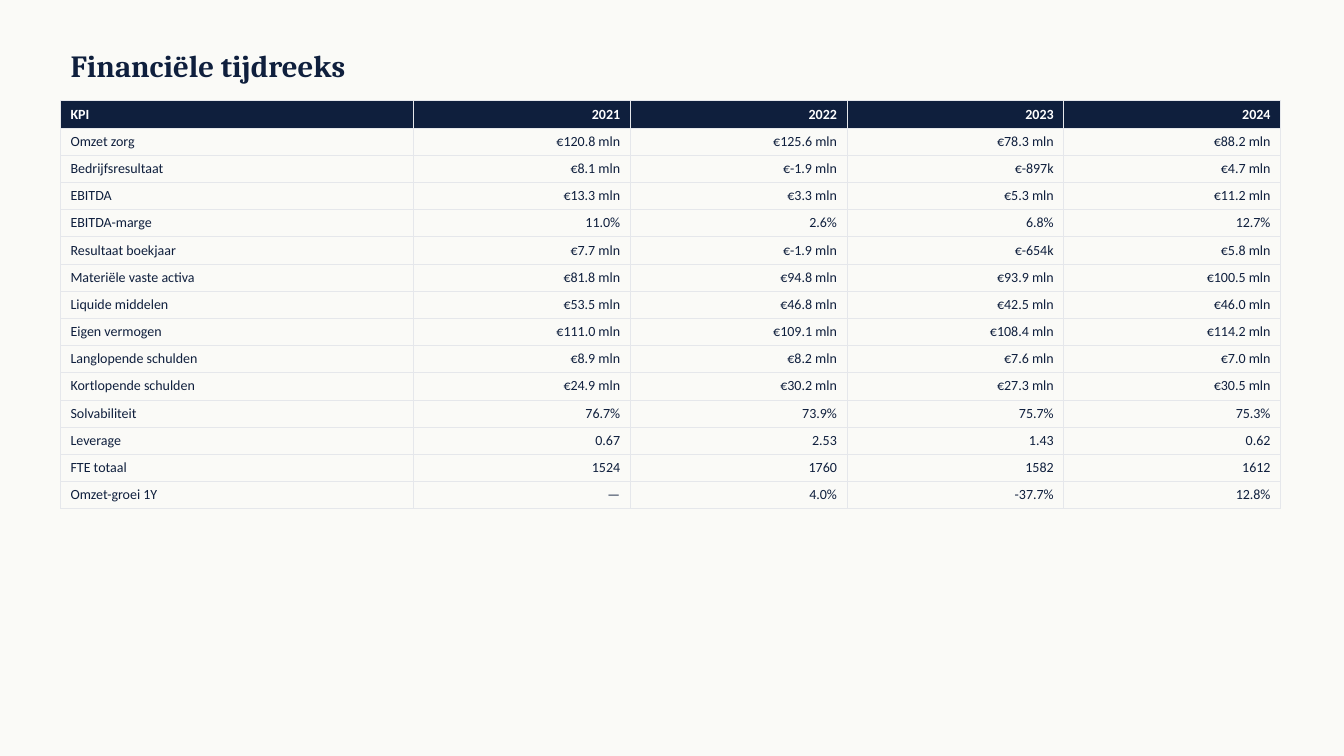
from lxml import etree
from pptx import Presentation
from pptx.dml.color import RGBColor
from pptx.enum.text import MSO_ANCHOR, PP_ALIGN
from pptx.oxml.ns import qn
from pptx.util import Inches, Pt

LEFT, RIGHT = PP_ALIGN.LEFT, PP_ALIGN.RIGHT
MIDDLE = MSO_ANCHOR.MIDDLE

NAVY = RGBColor(0x0F, 0x1F, 0x3D)
WHITE = RGBColor(0xFF, 0xFF, 0xFF)
PAPER = RGBColor(0xFA, 0xFA, 0xF7)
BORDER = RGBColor(0xE5, 0xE7, 0xEB)

TITLE_LAYOUT = 5
ROW_HEIGHT = 0.27
COLUMN_WIDTHS = [3.5] + [2.15] * 4

KPI_ROWS = [
    ("KPI", "2021", "2022", "2023", "2024"),
    ("Omzet zorg", "€120.8 mln", "€125.6 mln", "€78.3 mln", "€88.2 mln"),
    ("Bedrijfsresultaat", "€8.1 mln", "€-1.9 mln", "€-897k", "€4.7 mln"),
    ("EBITDA", "€13.3 mln", "€3.3 mln", "€5.3 mln", "€11.2 mln"),
    ("EBITDA-marge", "11.0%", "2.6%", "6.8%", "12.7%"),
    ("Resultaat boekjaar", "€7.7 mln", "€-1.9 mln", "€-654k", "€5.8 mln"),
    ("Materiële vaste activa", "€81.8 mln", "€94.8 mln", "€93.9 mln", "€100.5 mln"),
    ("Liquide middelen", "€53.5 mln", "€46.8 mln", "€42.5 mln", "€46.0 mln"),
    ("Eigen vermogen", "€111.0 mln", "€109.1 mln", "€108.4 mln", "€114.2 mln"),
    ("Langlopende schulden", "€8.9 mln", "€8.2 mln", "€7.6 mln", "€7.0 mln"),
    ("Kortlopende schulden", "€24.9 mln", "€30.2 mln", "€27.3 mln", "€30.5 mln"),
    ("Solvabiliteit", "76.7%", "73.9%", "75.7%", "75.3%"),
    ("Leverage", "0.67", "2.53", "1.43", "0.62"),
    ("FTE totaal", "1524", "1760", "1582", "1612"),
    ("Omzet-groei 1Y", "—", "4.0%", "-37.7%", "12.8%"),
]


def write_text(text_frame, text, font_name, size, color, bold, alignment=LEFT):
    paragraph = text_frame.paragraphs[0]
    paragraph.alignment = alignment
    run = paragraph.add_run()
    run.text = text
    run.font.name = font_name
    run.font.size = Pt(size)
    run.font.bold = bold
    run.font.color.rgb = color


def add_title(slide, text):
    title = slide.shapes.title
    title.left, title.top = Inches(0.6), Inches(0.4)
    title.width, title.height = Inches(12), Inches(0.5)
    title.text_frame.word_wrap = True
    title.text_frame.vertical_anchor = MIDDLE
    write_text(title.text_frame, text, "Cambria", 22, NAVY, True)


def add_cell_borders(cell):
    properties = cell._tc.get_or_add_tcPr()
    for side in ("a:lnL", "a:lnR", "a:lnT", "a:lnB"):
        line = etree.SubElement(properties, qn(side), w=str(Pt(0.5)))
        fill = etree.SubElement(line, qn("a:solidFill"))
        etree.SubElement(fill, qn("a:srgbClr"), val=str(BORDER))


def format_cell(cell, text, is_header, alignment):
    add_cell_borders(cell)
    if is_header:
        cell.fill.solid()
        cell.fill.fore_color.rgb = NAVY
    else:
        cell.fill.background()
    color = WHITE if is_header else NAVY
    write_text(cell.text_frame, text, "Calibri", 10, color, is_header, alignment)


def add_kpi_table(slide, rows):
    frame = slide.shapes.add_table(
        len(rows), len(COLUMN_WIDTHS), Inches(0.6), Inches(1),
        Inches(sum(COLUMN_WIDTHS)), Inches(ROW_HEIGHT * len(rows)))
    table = frame.table
    table.horz_banding = False
    for column, width in zip(table.columns, COLUMN_WIDTHS):
        column.width = Inches(width)
    for row_index, values in enumerate(rows):
        table.rows[row_index].height = Inches(ROW_HEIGHT)
        for column_index, text in enumerate(values):
            alignment = RIGHT if column_index else LEFT
            format_cell(table.cell(row_index, column_index), text,
                        row_index == 0, alignment)


def main():
    presentation = Presentation()
    presentation.slide_width = Inches(13.33)
    presentation.slide_height = Inches(7.5)
    slide = presentation.slides.add_slide(presentation.slide_layouts[TITLE_LAYOUT])
    slide.background.fill.solid()
    slide.background.fill.fore_color.rgb = PAPER
    add_title(slide, "Financiële tijdreeks")
    add_kpi_table(slide, KPI_ROWS)
    presentation.save("out.pptx")


if __name__ == "__main__":
    main()
